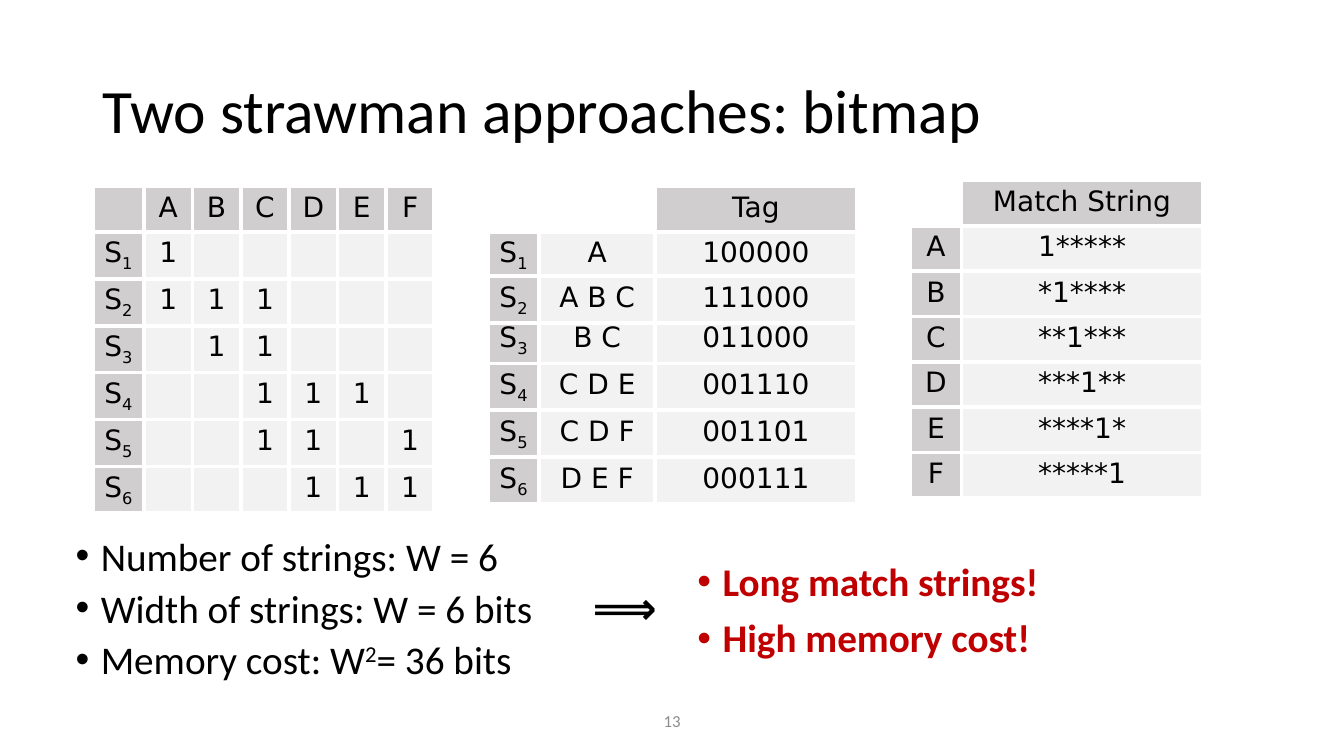
from lxml.etree import SubElement
from pptx import Presentation
from pptx.dml.color import RGBColor
from pptx.enum.text import MSO_ANCHOR as Anchor, MSO_AUTO_SIZE as AutoSize, PP_ALIGN as Align
from pptx.oxml.ns import qn
from pptx.util import Pt

COLORS = {"text": "000000", "alert": "C00000", "number": "8C8C8C",
          "header": "D0CECE", "cell": "F2F2F2", "blank": "FFFFFF"}
LETTERS = "ABCDEF"
SETS = ["A", "ABC", "BC", "CDE", "CDF", "DEF"]
ROW_H = 32.4
LABEL_W = 36.7


def rgb(name):
    return RGBColor.from_string(COLORS[name])


def style(p, size, color="text", font="Calibri", bold=False, align=Align.LEFT):
    p.alignment = align
    p.font.name, p.font.size, p.font.bold = font, Pt(size), bold
    p.font.color.rgb = rgb(color)


def place(sp, box):
    sp.left, sp.top, sp.width, sp.height = map(Pt, box)


def add_runs(p, text):
    """Write text; a part after ^ is raised, after _ lowered, up to the next |."""
    for part in text.replace("^", "|^").replace("_", "|_").split("|"):
        r = p.add_run()
        r.text = part.lstrip("^_")
        if part[0] in "^_":
            r.font._element.set("baseline", "30000" if part[0] == "^" else "-25000")


def add_title(slide, box, text):
    sp = slide.shapes.title
    place(sp, box)
    tf = sp.text_frame
    tf.auto_size, tf.vertical_anchor = AutoSize.NONE, Anchor.MIDDLE
    p = tf.paragraphs[0]
    p.text, p.line_spacing = text, 0.9
    style(p, 44)


def add_bullets(sp, box, items, spacing, color="text", bold=False):
    place(sp, box)
    tf = sp.text_frame
    tf.auto_size, tf.vertical_anchor = AutoSize.NONE, Anchor.TOP
    for i, item in enumerate(items):
        p = tf.add_paragraph() if i else tf.paragraphs[0]
        add_runs(p, item)
        p.line_spacing, p.space_before = spacing, Pt(10)
        style(p, 28, color, bold=bold)
        pPr = p._p.get_or_add_pPr()
        pPr.set("marL", str(Pt(18)))
        pPr.set("indent", str(-Pt(18)))


def add_label(slide, box, text, size, color="text", bold=False,
              align=Align.LEFT, anchor=Anchor.TOP, wrap=True):
    tf = slide.shapes.add_textbox(*map(Pt, box)).text_frame
    tf.word_wrap, tf.vertical_anchor = wrap, anchor
    p = tf.paragraphs[0]
    p.text = text
    style(p, size, color, bold=bold, align=align)


def add_borders(cell):
    tcPr = cell._tc.get_or_add_tcPr()
    for i, side in enumerate(("lnL", "lnR", "lnT", "lnB")):
        ln = SubElement(tcPr, qn(f"a:{side}"), w=str(Pt(3)))
        fill = SubElement(ln, qn("a:solidFill"))
        SubElement(fill, qn("a:srgbClr"), val=COLORS["blank"])
        tcPr.insert(i, ln)


def add_grid(slide, left, top, widths, rows, header=True, blanks=0):
    """Add a table; the first `blanks` cells of its header row stay white."""
    table = slide.shapes.add_table(len(rows), len(widths), Pt(left), Pt(top),
                                   Pt(sum(widths)), Pt(ROW_H * len(rows))).table
    table.first_row = table.horz_banding = False
    for col, width in zip(table.columns, widths):
        col.width = Pt(width)
    for i, row in enumerate(rows):
        table.rows[i].height = Pt(ROW_H)
        is_header = header and i == 0
        for j, text in enumerate(row):
            cell = table.cell(i, j)
            kind = "header" if is_header or j == 0 else "cell"
            cell.fill.solid()
            cell.fill.fore_color.rgb = rgb("blank" if is_header and j < blanks else kind)
            add_borders(cell)
            p = cell.text_frame.paragraphs[0]
            if text:
                add_runs(p, text)
            style(p, 20, font="DejaVu Sans", align=Align.CENTER)


def add_match_table(slide, left, top):
    rows = [["", "Match String"]]
    rows += [[c, "".join("1" if c == d else "*" for d in LETTERS)] for c in LETTERS]
    add_grid(slide, left, top, [LABEL_W, 172.1], rows, blanks=1)


def add_bitmap_table(slide, left, top):
    rows = [["", *LETTERS]]
    rows += [[f"S_{n}", *("1" if c in s else "" for c in LETTERS)]
             for n, s in enumerate(SETS, 1)]
    add_grid(slide, left, top, [LABEL_W] + [34.56] * 6, rows)


def add_tag_tables(slide, left, top):
    """Stack three grids: S3 to S6, the header with S1, and S2."""
    rows = [[f"S_{n}", " ".join(s), "".join(str(int(c in s)) for c in LETTERS)]
            for n, s in enumerate(SETS, 1)]
    widths = [LABEL_W, 82.8, 144]
    add_grid(slide, left, top + 92.9, widths, rows[2:], header=False)
    add_grid(slide, left, top, widths, [["", "", "Tag"], rows[0]], blanks=2)
    add_grid(slide, left, top + 64.1, widths, rows[1:2], header=False)


def main():
    prs = Presentation()
    prs.slide_width, prs.slide_height = Pt(960), Pt(540)
    slide = prs.slides.add_slide(prs.slide_layouts[3])
    costs, drawbacks = slide.placeholders[1], slide.placeholders[2]
    add_title(slide, (66.2, 28.8, 828, 104.4), "Two strawman approaches: bitmap")
    add_match_table(slide, 650.2, 128.9)
    add_bitmap_table(slide, 66.2, 133.2)
    add_tag_tables(slide, 348.5, 133.2)
    add_bullets(costs, (46.8, 383, 583.9, 116.6),
                ["Number of strings: W = 6", "Width of strings: W = 6 bits",
                 "Memory cost: W^2|= 36 bits"], 0.8)
    add_label(slide, (416.2, 410.4, 52.6, 46.1), "⟹", 32, bold=True, wrap=False)
    add_bullets(drawbacks, (491, 398.2, 263.5, 116.6),
                ["Long match strings!", "High memory cost!"], 0.9, "alert", True)
    add_label(slide, (372.2, 500.4, 216, 28.8), "13", 12, "number",
              align=Align.CENTER, anchor=Anchor.MIDDLE)
    prs.save("out.pptx")


if __name__ == "__main__":
    main()
